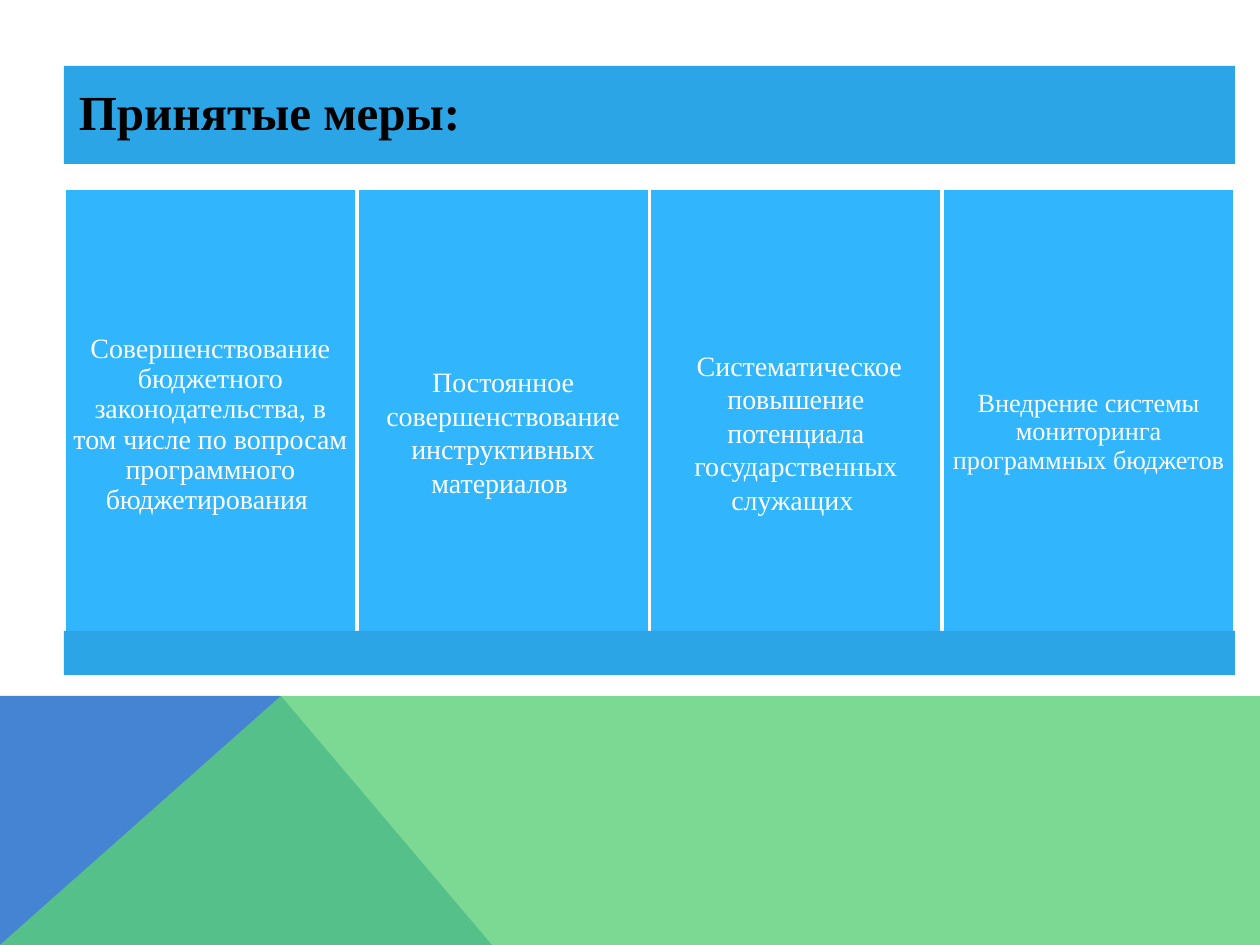
from lxml.etree import SubElement
from pptx import Presentation
from pptx.dml.color import RGBColor
from pptx.enum.shapes import MSO_SHAPE as Kind
from pptx.enum.text import MSO_ANCHOR as Anchor, PP_ALIGN as Align
from pptx.oxml.ns import qn
from pptx.util import Pt

PX = 914400 / 126
WIDE, HIGH = 1260, 945
FONT = "Times New Roman"
WHITE = RGBColor(0xFF, 0xFF, 0xFF)
BLACK = RGBColor(0, 0, 0)
BAND = RGBColor(0x2C, 0xA5, 0xE6)
SKY = RGBColor(0x31, 0xB6, 0xFD)
BLUE = RGBColor(0x45, 0x84, 0xD3)
GREEN = RGBColor(0x5B, 0xD0, 0x78)

CARDS = [
    ("Совершенствование бюджетного законодательства, в том числе по вопросам "
     "программного бюджетирования ", 16, 0.9, 9, 474),
    ("Постоянное совершенствование инструктивных материалов ", 16, 1, 9, 488),
    (" Систематическое повышение потенциала государственных служащих ", 16, 1, 9, 488),
    ("Внедрение системы мониторинга программных бюджетов ", 15, 0.9, 8, 489),
]


def emu(px):
    return round(px * PX)


def paint(shape, color):
    shape.shadow.inherit = False
    shape.fill.solid()
    shape.fill.fore_color.rgb = color
    shape.line.fill.background()


def add_rect(slide, box, color):
    rect = slide.shapes.add_shape(Kind.RECTANGLE, *map(emu, box))
    paint(rect, color)
    return rect


def add_text(shape, text, size, color, align, pad, gap, bold=False):
    frame = shape.text_frame
    frame.word_wrap = True
    frame.vertical_anchor = Anchor.MIDDLE
    frame.margin_left = frame.margin_right = emu(pad)
    frame.margin_top = frame.margin_bottom = emu(pad)
    para = frame.paragraphs[0]
    para.alignment = align
    para.line_spacing = gap
    run = para.add_run()
    run.text = text
    run.font.name = FONT
    run.font.size = Pt(size)
    run.font.bold = bold
    run.font.color.rgb = color


def add_poly(slide, x, y, points, color):
    spots = [(x + dx, y + dy) for dx, dy in points]
    form = slide.shapes.build_freeform(*spots[0], scale=PX)
    form.add_line_segments(spots[1:], close=True)
    poly = form.convert_to_shape()
    paint(poly, color)
    return poly


def add_base(slide, x, y, w, h):
    peak = 281
    add_poly(slide, x, y, [(0, h), (0, 0), (peak, 0), (492, h)], BLUE)
    hill = add_poly(slide, x, y, [(0, h), (peak, 0), (w, 0), (w, h)], GREEN)
    tone = hill.fill._xPr.find(qn("a:solidFill"))[0]
    SubElement(tone, qn("a:alpha"), val="80000")


def add_title(slide, x, y, w, h):
    bar = add_rect(slide, (x, y, w, h), BAND)
    add_text(bar, "Принятые меры:", 28, BLACK, Align.LEFT, 15, 0.9, True)


def add_cards(slide, x, y, w, h):
    step = w / len(CARDS)
    for i, (text, size, gap, pad, tall) in enumerate(CARDS):
        card = add_rect(slide, (x + i * step, y, step, tall), SKY)
        card.line.color.rgb = WHITE
        card.line.width = Pt(2)
        add_text(card, text, size, WHITE, Align.CENTER, pad, gap)
    foot = 44
    add_rect(slide, (x, y + h - foot, w, foot), BAND)


def main():
    deck = Presentation()
    deck.slide_width, deck.slide_height = emu(WIDE), emu(HIGH)
    slide = deck.slides.add_slide(deck.slide_layouts[6])
    add_base(slide, 0, 696, WIDE, 249)
    add_title(slide, 64, 66, 1171, 98)
    add_cards(slide, 64, 188, 1171, 487)
    deck.save("out.pptx")


if __name__ == "__main__":
    main()
